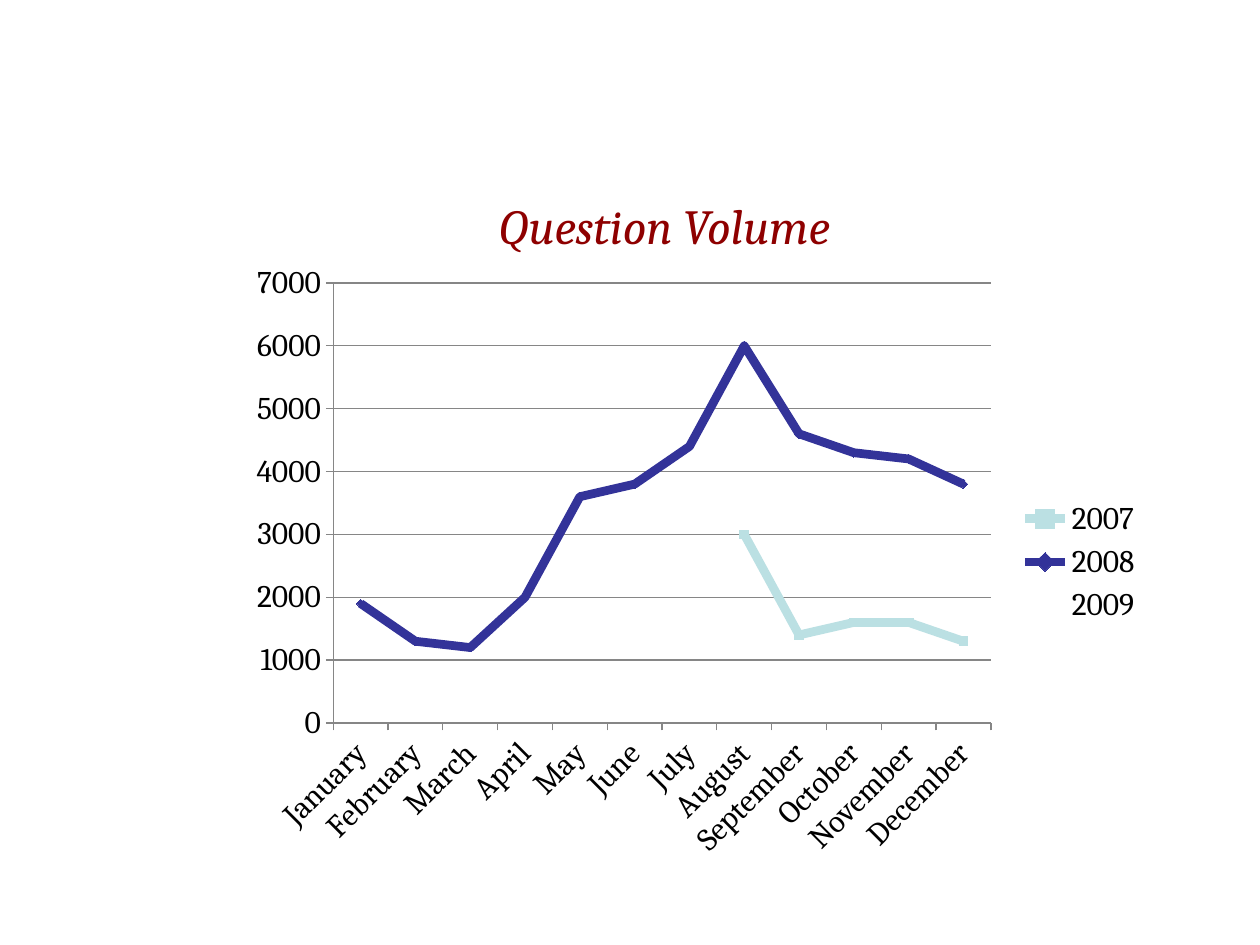
from lxml import etree
from pptx import Presentation
from pptx.chart.data import CategoryChartData
from pptx.dml.color import RGBColor
from pptx.enum.chart import XL_CHART_TYPE, XL_LEGEND_POSITION, XL_MARKER_STYLE, XL_TICK_MARK
from pptx.enum.text import MSO_AUTO_SIZE, PP_ALIGN
from pptx.oxml.ns import qn
from pptx.util import Inches, Pt

LINE_MARKERS = XL_CHART_TYPE.LINE_MARKERS
RIGHT = XL_LEGEND_POSITION.RIGHT
SQUARE = XL_MARKER_STYLE.SQUARE
DIAMOND = XL_MARKER_STYLE.DIAMOND
TRIANGLE = XL_MARKER_STYLE.TRIANGLE
OUTSIDE = XL_TICK_MARK.OUTSIDE
CENTER = PP_ALIGN.CENTER
FIT_SHAPE = MSO_AUTO_SIZE.SHAPE_TO_FIT_TEXT

RED = RGBColor(0x8E, 0x00, 0x00)
BLACK = RGBColor(0x00, 0x00, 0x00)
GRAY = RGBColor(0x86, 0x86, 0x86)
AQUA = RGBColor(0xBB, 0xE0, 0xE3)
BLUE = RGBColor(0x33, 0x33, 0x99)
WHITE = RGBColor(0xFF, 0xFF, 0xFF)

MONTHS = ["January", "February", "March", "April", "May", "June", "July",
          "August", "September", "October", "November", "December"]
SERIES = [
    ("2007", [None] * 7 + [3000, 1400, 1600, 1600, 1300], AQUA, SQUARE),
    ("2008", [1900, 1300, 1200, 2000, 3600, 3800, 4400, 6000, 4600, 4300, 4200, 3800], BLUE, DIAMOND),
    ("2009", [5800] + [None] * 11, WHITE, TRIANGLE),
]
TITLE_FONT = {"name": "Cambria", "size": Pt(28), "italic": True}
CHART_FONT = {"name": "Cambria", "size": Pt(18), "bold": False}
PLOT_LAYOUT = {"layoutTarget": "inner", "xMode": "edge", "yMode": "edge",
               "x": 0.1, "y": 0.05, "w": 0.72, "h": 0.71}

prs = Presentation()
prs.slide_width = Inches(10)
prs.slide_height = Inches(7.5)
s = prs.slides.add_slide(prs.slide_layouts[6])

data = CategoryChartData()
data.categories = MONTHS
for name, values, color, marker in SERIES:
    data.add_series(name, values)
chart = s.shapes.add_chart(LINE_MARKERS, Inches(1.92), Inches(2), Inches(7.25), Inches(4.92), data).chart
chart.has_title = False
for key, value in CHART_FONT.items():
    setattr(chart.font, key, value)
chart.font.color.rgb = BLACK

chart.has_legend = True
chart.legend.position = RIGHT
chart.legend.include_in_layout = False

plot = chart.plots[0]
plot.vary_by_categories = False
for ser, (name, values, color, marker) in zip(plot.series, SERIES):
    ser.smooth = False
    ser.format.line.color.rgb = color
    ser.format.line.width = Pt(5)
    ser.marker.style = marker
    ser.marker.size = 5
    ser.marker.format.fill.solid()
    ser.marker.format.fill.fore_color.rgb = color
    ser.marker.format.line.color.rgb = color

value_axis = chart.value_axis
value_axis.minimum_scale = 0
value_axis.maximum_scale = 7000
value_axis.major_unit = 1000
value_axis.has_major_gridlines = True
value_axis.major_gridlines.format.line.color.rgb = GRAY
for axis in (chart.category_axis, value_axis):
    axis.major_tick_mark = OUTSIDE
    axis.format.line.color.rgb = GRAY
labels = chart.category_axis.tick_labels
for key, value in CHART_FONT.items():
    setattr(labels.font, key, value)
labels.font.color.rgb = BLACK
chart.category_axis._element.find(qn("c:txPr")).find(qn("a:bodyPr")).set("rot", "-2700000")

plot_area = chart._chartSpace.chart.plotArea
for old in plot_area.findall(qn("c:layout")):
    plot_area.remove(old)
layout = etree.Element(qn("c:layout"))
manual = etree.SubElement(layout, qn("c:manualLayout"))
for key, value in PLOT_LAYOUT.items():
    etree.SubElement(manual, qn(f"c:{key}")).set("val", str(value))
plot_area.insert(0, layout)

tf = s.shapes.add_textbox(Inches(3.67), Inches(1.5), Inches(3.2), Inches(0.57)).text_frame
tf.word_wrap = False
tf.auto_size = FIT_SHAPE
p = tf.paragraphs[0]
p.alignment = CENTER
r = p.add_run()
r.text = "Question Volume"
for key, value in TITLE_FONT.items():
    setattr(r.font, key, value)
r.font.color.rgb = RED

prs.save("out.pptx")
